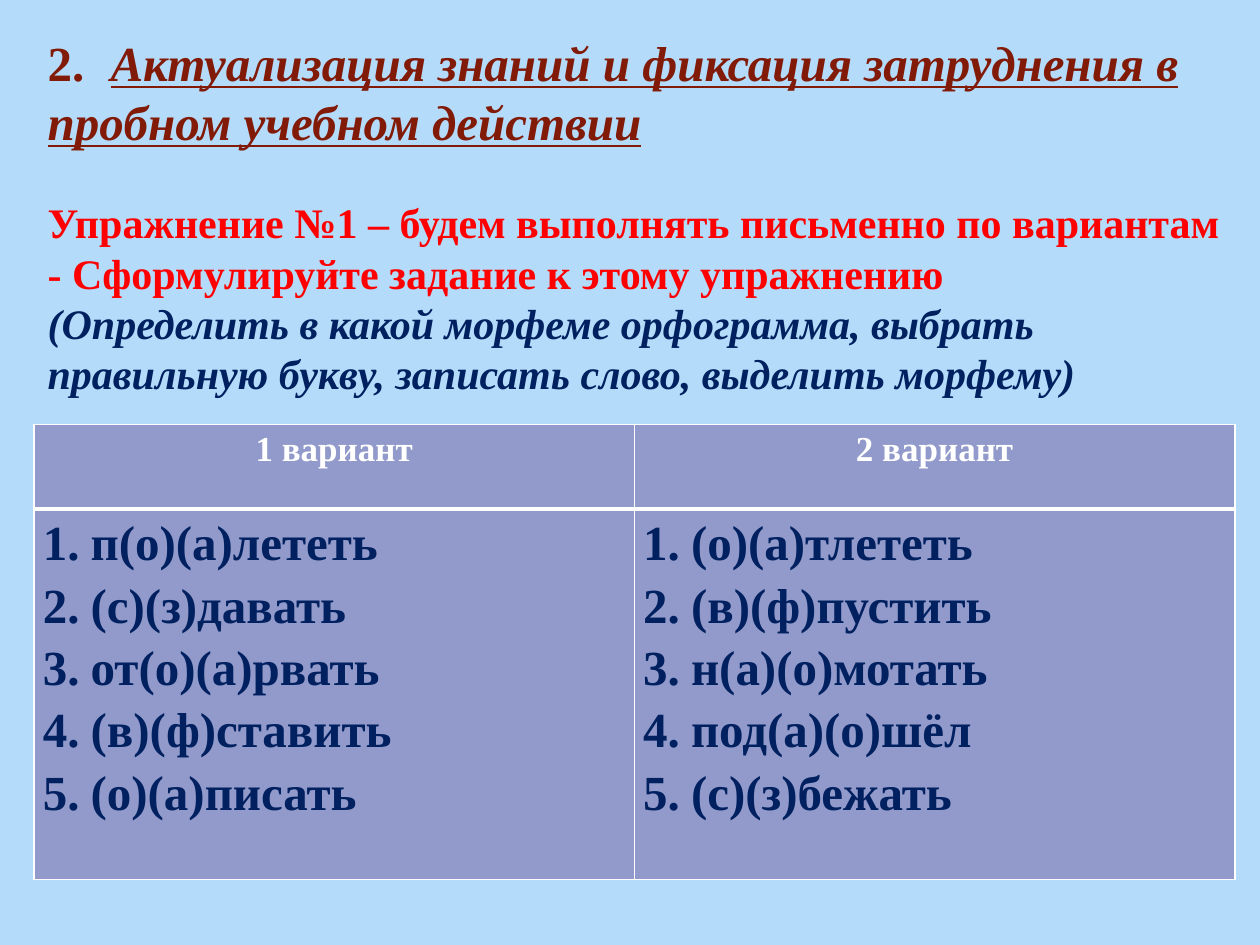
from lxml.etree import SubElement
from pptx import Presentation
from pptx.dml.color import RGBColor
from pptx.enum.text import MSO_AUTO_SIZE, PP_ALIGN
from pptx.oxml.ns import qn
from pptx.util import Inches, Pt

FONT = "Times New Roman"
SKY, BROWN, RED, NAVY = "B4DCFA", "821A08", "FF0000", "002060"
LILAC, WHITE = "919ACA", "FFFFFF"

NUMBER = "2.\t"
TITLE = "Актуализация знаний и фиксация затруднения в пробном учебном действии"
# text, colour, italic, space before in points
TASK = [
    ("Упражнение №1 – будем выполнять письменно по вариантам", RED, False, 26.5),
    ("- Сформулируйте задание к этому упражнению", RED, False, 0),
    ("(Определить в какой морфеме орфограмма, выбрать правильную букву, "
     "записать слово, выделить морфему)", NAVY, True, 0),
]
VARIANTS = {
    "1 вариант": ["п(о)(а)лететь", "(с)(з)давать", "от(о)(а)рвать",
                  "(в)(ф)ставить", "(о)(а)писать"],
    "2 вариант": ["(о)(а)тлететь", "(в)(ф)пустить", "н(а)(о)мотать",
                  "под(а)(о)шёл", "(с)(з)бежать"],
}
ROW_HEIGHTS = [0.67, 2.94]
TABLE_WIDTH = 9.53


def rgb(value):
    return RGBColor.from_string(value)


def set_font(paragraph, size, color, italic=False):
    font = paragraph.font
    font.name, font.size = FONT, Pt(size)
    font.bold, font.italic = True, italic
    font.color.rgb = rgb(color)


def set_borders(cell, bottom):
    tc_pr = cell._tc.get_or_add_tcPr()
    for side, width in (("L", 1), ("R", 1), ("T", 1), ("B", bottom)):
        line = SubElement(tc_pr, qn(f"a:ln{side}"), w=str(Pt(width)))
        fill = SubElement(line, qn("a:solidFill"))
        SubElement(fill, qn("a:srgbClr"), val=WHITE)


def number_paragraph(paragraph):
    p_pr = paragraph._p.get_or_add_pPr()
    p_pr.set("marL", str(Inches(0.38)))
    p_pr.set("indent", str(Inches(-0.38)))
    bullet_font = SubElement(p_pr, qn("a:buFont"))
    bullet_font.set("typeface", "+mj-lt")
    SubElement(p_pr, qn("a:buAutoNum"), type="arabicPeriod")


def fill_cell(cell, lines, size, color, align, numbered, bottom):
    set_borders(cell, bottom)
    cell.fill.solid()
    cell.fill.fore_color.rgb = rgb(LILAC)
    cell.margin_left = cell.margin_right = Inches(0.07)
    cell.margin_top = cell.margin_bottom = 0
    cell.text = "\n".join(lines)
    for paragraph in cell.text_frame.paragraphs:
        paragraph.alignment = align
        paragraph.line_spacing = 1.15
        if numbered:
            number_paragraph(paragraph)
        set_font(paragraph, size, color)


prs = Presentation()
prs.slide_width, prs.slide_height = Inches(10), Inches(7.5)
slide = prs.slides.add_slide(prs.slide_layouts[6])
slide.background.fill.solid()
slide.background.fill.fore_color.rgb = rgb(SKY)

intro = slide.shapes.add_textbox(
    Inches(0.28), Inches(0.21), Inches(9.53), Inches(3.43)).text_frame
intro.word_wrap = True
intro.auto_size = MSO_AUTO_SIZE.SHAPE_TO_FIT_TEXT
heading = intro.paragraphs[0]
set_font(heading, 28, BROWN)
heading.add_run().text = NUMBER
title = heading.add_run()
title.text = TITLE
title.font.italic = title.font.underline = True
for text, color, italic, gap in TASK:
    paragraph = intro.add_paragraph()
    paragraph.text = text
    paragraph.space_before = Pt(gap)
    set_font(paragraph, 24, color, italic)

table = slide.shapes.add_table(
    len(ROW_HEIGHTS), len(VARIANTS), Inches(0.27), Inches(3.37),
    Inches(TABLE_WIDTH), Inches(sum(ROW_HEIGHTS))).table
for row, height in zip(table.rows, ROW_HEIGHTS):
    row.height = Inches(height)
for col, (variant, words) in enumerate(VARIANTS.items()):
    table.columns[col].width = Inches(TABLE_WIDTH / len(VARIANTS))
    fill_cell(table.cell(0, col), [variant], 20, WHITE, PP_ALIGN.CENTER,
              numbered=False, bottom=3)
    fill_cell(table.cell(1, col), words, 28, NAVY, PP_ALIGN.JUSTIFY,
              numbered=True, bottom=1)
    # The two rows share this edge, so both give it the same width
    table.cell(1, col)._tc.tcPr.find(qn("a:lnT")).set("w", str(Pt(3)))

prs.save("out.pptx")
